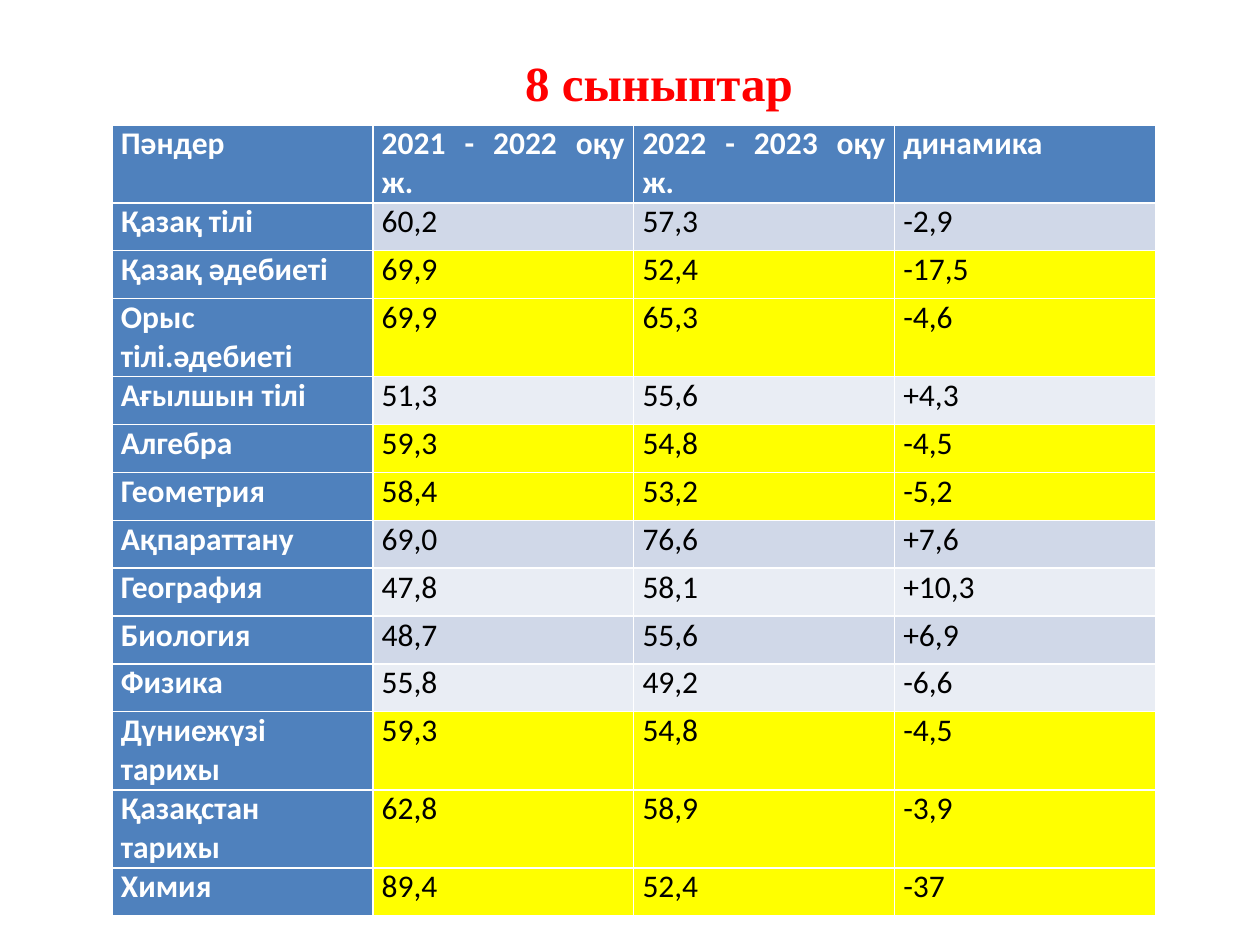
import pptx
import pptx.util
import pptx.dml.color
import pptx.enum.text

Inches = pptx.util.Inches
Align = pptx.enum.text.PP_ALIGN
Anchor = pptx.enum.text.MSO_ANCHOR

COLORS = {
    "white": "FFFFFF",
    "black": "000000",
    "red": "FF0000",
    "blue": "4F81BD",
    "odd": "D0D8E8",
    "even": "E9EDF4",
    "mark": "FFFF00",
}

HEAD = ["Пәндер", "2021 - 2022 оқу ж.", "2022 - 2023 оқу ж.", "динамика"]
SCORES = [
    ["Қазақ тілі", "60,2", "57,3", "-2,9"],
    ["Қазақ әдебиеті", "69,9", "52,4", "-17,5"],
    ["Орыс тілі.әдебиеті", "69,9", "65,3", "-4,6"],
    ["Ағылшын тілі", "51,3", "55,6", "+4,3"],
    ["Алгебра", "59,3", "54,8", "-4,5"],
    ["Геометрия", "58,4", "53,2", "-5,2"],
    ["Ақпараттану", "69,0", "76,6", "+7,6"],
    ["География", "47,8", "58,1", "+10,3"],
    ["Биология", "48,7", "55,6", "+6,9"],
    ["Физика", "55,8", "49,2", "-6,6"],
    ["Дүниежүзі тарихы", "59,3", "54,8", "-4,5"],
    ["Қазақстан тарихы", "62,8", "58,9", "-3,9"],
    ["Химия", "89,4", "52,4", "-37"],
]
MARKED = {2, 3, 5, 6, 11, 12, 13}
TALL = {0, 3, 11, 12}

TITLE = {"name": "Times New Roman", "size": pptx.util.Pt(28), "bold": True}
LABEL = {"name": "Calibri", "size": pptx.util.Pt(18), "bold": True}
VALUE = {**LABEL, "bold": False}


def apply(item, style):
    for key, value in style.items():
        setattr(item, key, value)


def paint(fill, color):
    fill.solid()
    fill.fore_color.rgb = pptx.dml.color.RGBColor.from_string(COLORS[color])


def write(frame, text, style, color, align):
    frame.text = text
    line = frame.paragraphs[0]
    line.alignment = align
    font = line.runs[0].font
    apply(font, style)
    paint(font.fill, color)


def add_title(slide, text):
    title = slide.shapes.title
    apply(title, {
        "left": Inches(1.09), "top": Inches(-0.07),
        "width": Inches(8.28), "height": Inches(1.28),
    })
    paint(title.fill, "white")
    frame = title.text_frame
    apply(frame, {
        "auto_size": pptx.enum.text.MSO_AUTO_SIZE.NONE,
        "vertical_anchor": Anchor.MIDDLE,
        "margin_top": Inches(0.21), "margin_bottom": Inches(0.05),
    })
    write(frame, text, TITLE, "red", Align.CENTER)


def fill_cell(cell, text, row, col):
    label = row == 0 or col == 0
    if label:
        back = "blue"
    elif row in MARKED:
        back = "mark"
    else:
        back = "odd" if row % 2 else "even"
    paint(cell.fill, back)
    apply(cell, {
        "margin_left": Inches(0.07), "margin_right": Inches(0.07),
        "margin_top": 0, "margin_bottom": 0,
        "vertical_anchor": Anchor.TOP,
    })
    write(cell.text_frame, text, LABEL if label else VALUE,
          "white" if label else "black", Align.JUSTIFY)


def add_scores(slide, rows):
    table = slide.shapes.add_table(
        len(rows), len(HEAD), Inches(0.89), Inches(0.99),
        Inches(8.28), Inches(6.3)).table
    table.first_col = True
    for col in table.columns:
        col.width = Inches(2.07)
    for row, texts in enumerate(rows):
        table.rows[row].height = Inches(0.62 if row in TALL else 0.38)
        for col, text in enumerate(texts):
            fill_cell(table.cell(row, col), text, row, col)


def main():
    deck = pptx.Presentation()
    apply(deck, {"slide_width": Inches(10), "slide_height": Inches(7.5)})
    slide = deck.slides.add_slide(deck.slide_layouts[5])
    add_title(slide, "8 сыныптар")
    add_scores(slide, [HEAD] + SCORES)
    deck.save("out.pptx")


if __name__ == "__main__":
    main()
